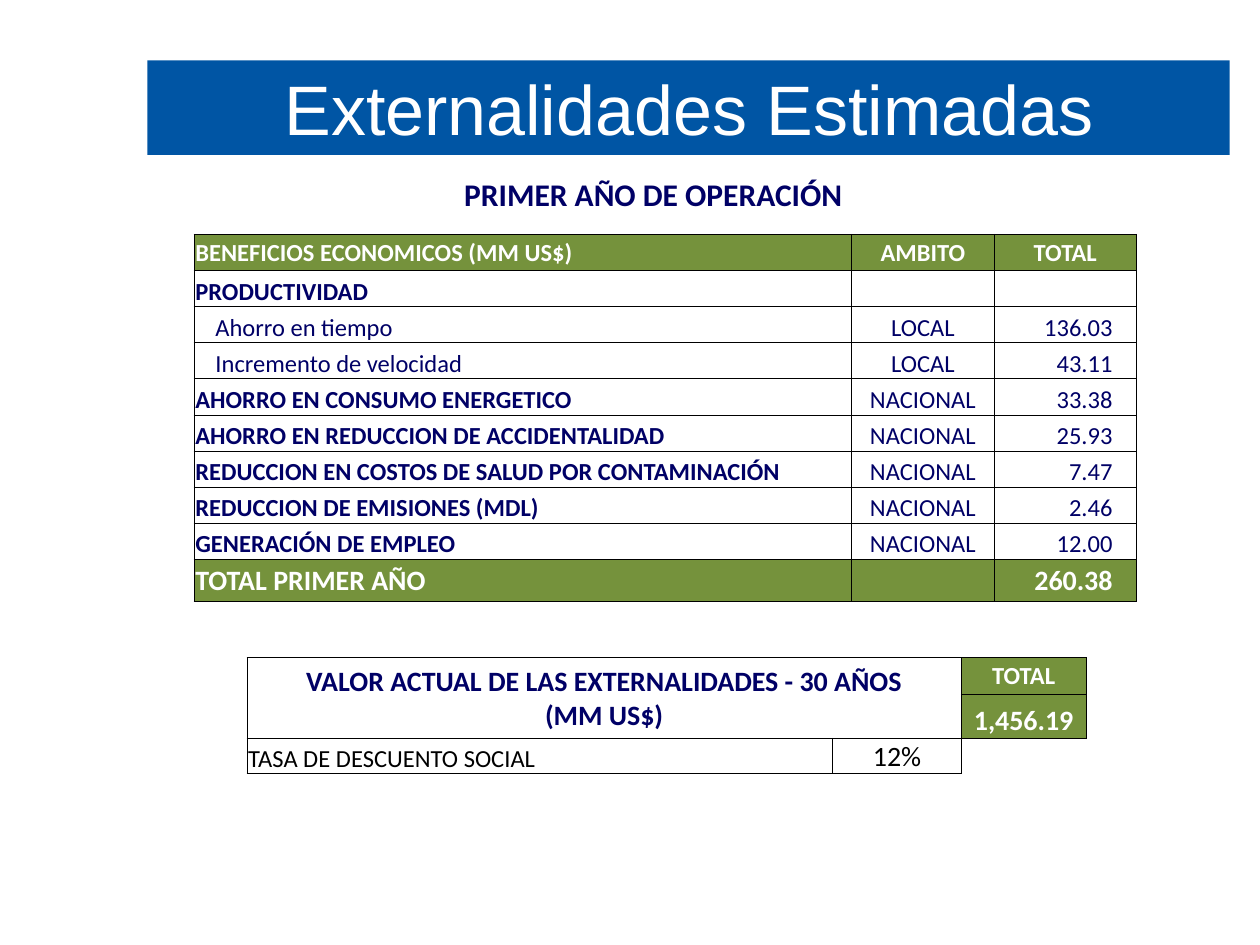
"""Build the slide of estimated externalities with its benefit and present-value tables."""
from lxml import etree
from pptx import Presentation
from pptx.dml.color import RGBColor
from pptx.enum.shapes import MSO_SHAPE
from pptx.enum.text import MSO_ANCHOR, PP_ALIGN
from pptx.oxml.ns import qn
from pptx.util import Inches, Pt

LEFT, CENTER, RIGHT = PP_ALIGN.LEFT, PP_ALIGN.CENTER, PP_ALIGN.RIGHT
MIDDLE, BOTTOM = MSO_ANCHOR.MIDDLE, MSO_ANCHOR.BOTTOM
RECTANGLE = MSO_SHAPE.RECTANGLE

COLORS = {"blue": "0055A4", "navy": "000066", "green": "75923C",
          "white": "FFFFFF", "black": "000000"}
TITLE = "Externalidades Estimadas"
SUBTITLE = "PRIMER AÑO DE OPERACIÓN"
HEADERS = ["BENEFICIOS ECONOMICOS (MM US$)", "AMBITO", "TOTAL"]
BENEFITS = [
    ("PRODUCTIVIDAD", "", ""),
    ("Ahorro en tiempo", "LOCAL", "136.03"),
    ("Incremento de velocidad", "LOCAL", "43.11"),
    ("AHORRO EN CONSUMO ENERGETICO", "NACIONAL", "33.38"),
    ("AHORRO EN REDUCCION DE ACCIDENTALIDAD", "NACIONAL", "25.93"),
    ("REDUCCION EN COSTOS DE SALUD POR CONTAMINACIÓN", "NACIONAL", "7.47"),
    ("REDUCCION DE EMISIONES (MDL)", "NACIONAL", "2.46"),
    ("GENERACIÓN DE EMPLEO", "NACIONAL", "12.00"),
]
TOTALS = ["TOTAL PRIMER AÑO", "", "260.38"]
PRESENT_VALUE = "VALOR ACTUAL DE LAS EXTERNALIDADES - 30 AÑOS\n(MM US$)"
DISCOUNT = ["TASA DE DESCUENTO SOCIAL", "12%"]
DETAILS = ("Ahorro en tiempo", "Incremento de velocidad")
ALIGNMENTS = [LEFT, CENTER, RIGHT]
VALUE_MARGIN = 0.19
DETAIL_INDENT = 0.17


def color(name):
    return RGBColor.from_string(COLORS[name])


def add_table(slide, left, top, widths, heights):
    table = slide.shapes.add_table(
        len(heights), len(widths), Inches(left), Inches(top),
        Inches(sum(widths)), Inches(sum(heights))).table
    table.first_row = table.horz_banding = False
    for column, width in zip(table.columns, widths):
        column.width = Inches(width)
    for row, height in zip(table.rows, heights):
        row.height = Inches(height)
    return table


def set_borders(cell, sides):
    properties = cell._tc.get_or_add_tcPr()
    for side in "LRTB":
        line = etree.SubElement(properties, qn(f"a:ln{side}"), w=str(Pt(0.5)))
        if side in sides:
            fill = etree.SubElement(line, qn("a:solidFill"))
            etree.SubElement(fill, qn("a:srgbClr"), val=COLORS["black"])
        else:
            etree.SubElement(line, qn("a:noFill"))


def fill_cell(cell, text="", size=14, ink="navy", bold=False, align=LEFT,
              anchor=MIDDLE, fill=None, sides="LRTB", left=0.01, right=0.01):
    set_borders(cell, sides)
    if fill:
        cell.fill.solid()
        cell.fill.fore_color.rgb = color(fill)
    else:
        cell.fill.background()
    cell.margin_left, cell.margin_right = Inches(left), Inches(right)
    cell.margin_top, cell.margin_bottom = Inches(0.01), 0
    cell.vertical_anchor = anchor
    cell.text_frame.text = text
    for paragraph in cell.text_frame.paragraphs:
        paragraph.alignment = align
        for run in paragraph.runs:
            run.font.name, run.font.size, run.font.bold = "Calibri", Pt(size), bold
            run.font.color.rgb = color(ink)
        if not text:
            etree.SubElement(paragraph._p, qn("a:endParaRPr"), sz=str(size * 100))


def add_title(slide):
    banner = slide.shapes.add_shape(
        RECTANGLE, Inches(1.17), Inches(0.48), Inches(8.59), Inches(0.75))
    banner.shadow.inherit = False
    banner.fill.solid()
    banner.fill.fore_color.rgb = color("blue")
    banner.line.fill.background()
    banner.text_frame.text = TITLE
    banner.text_frame.vertical_anchor = MIDDLE
    paragraph = banner.text_frame.paragraphs[0]
    paragraph.alignment = CENTER
    font = paragraph.runs[0].font
    font.name, font.size = "Arial", Pt(40)
    font.color.rgb = color("white")


def add_benefits(slide):
    rows = [HEADERS, *BENEFITS, TOTALS]
    table = add_table(slide, 1.54, 1.86, [5.22, 1.13, 1.13],
                      [0.287] * (len(rows) - 1) + [0.33])
    for row_index, row in enumerate(rows):
        header, total = row is HEADERS, row is TOTALS
        band = header or total
        for column_index, text in enumerate(row):
            value = column_index == 2 and not header
            fill_cell(
                table.cell(row_index, column_index), text,
                size=16 if total else 14,
                ink="white" if band else "navy",
                bold=band or (column_index == 0 and text not in DETAILS),
                align=CENTER if header and column_index else ALIGNMENTS[column_index],
                anchor=MIDDLE if band else BOTTOM,
                fill="green" if band else None,
                left=DETAIL_INDENT if text in DETAILS else 0.01,
                right=VALUE_MARGIN if value else 0.01)


def add_present_value(slide):
    table = add_table(slide, 1.96, 4.93, [4.65, 1.02, 0.99], [0.29, 0.29, 0.35, 0.28])
    for column_index in range(3):
        fill_cell(table.cell(0, column_index), fill="white", sides="B")
    for row_index in (1, 2):
        for column_index in (0, 1):
            text = PRESENT_VALUE if (row_index, column_index) == (1, 0) else ""
            fill_cell(table.cell(row_index, column_index), text,
                      size=16, bold=True, align=CENTER)
    table.cell(1, 0).merge(table.cell(2, 1))
    band = {"ink": "white", "bold": True, "align": CENTER, "fill": "green"}
    fill_cell(table.cell(1, 2), "TOTAL", **band)
    fill_cell(table.cell(2, 2), "1,456.19", size=16, anchor=BOTTOM, **band)
    for column_index, (text, size) in enumerate(zip(DISCOUNT, (14, 16))):
        fill_cell(table.cell(3, column_index), text, size=size, ink="black",
                  align=ALIGNMENTS[column_index], anchor=BOTTOM)
    fill_cell(table.cell(3, 2), sides="LT")


def main():
    presentation = Presentation()
    presentation.slide_width, presentation.slide_height = Inches(10), Inches(7.5)
    slide = presentation.slides.add_slide(presentation.slide_layouts[6])
    add_title(slide)
    subtitle = add_table(slide, 1.85, 1.39, [6.67], [0.32])
    fill_cell(subtitle.cell(0, 0), SUBTITLE, size=18, bold=True, align=CENTER, sides="")
    add_benefits(slide)
    add_present_value(slide)
    presentation.save("out.pptx")


if __name__ == "__main__":
    main()
